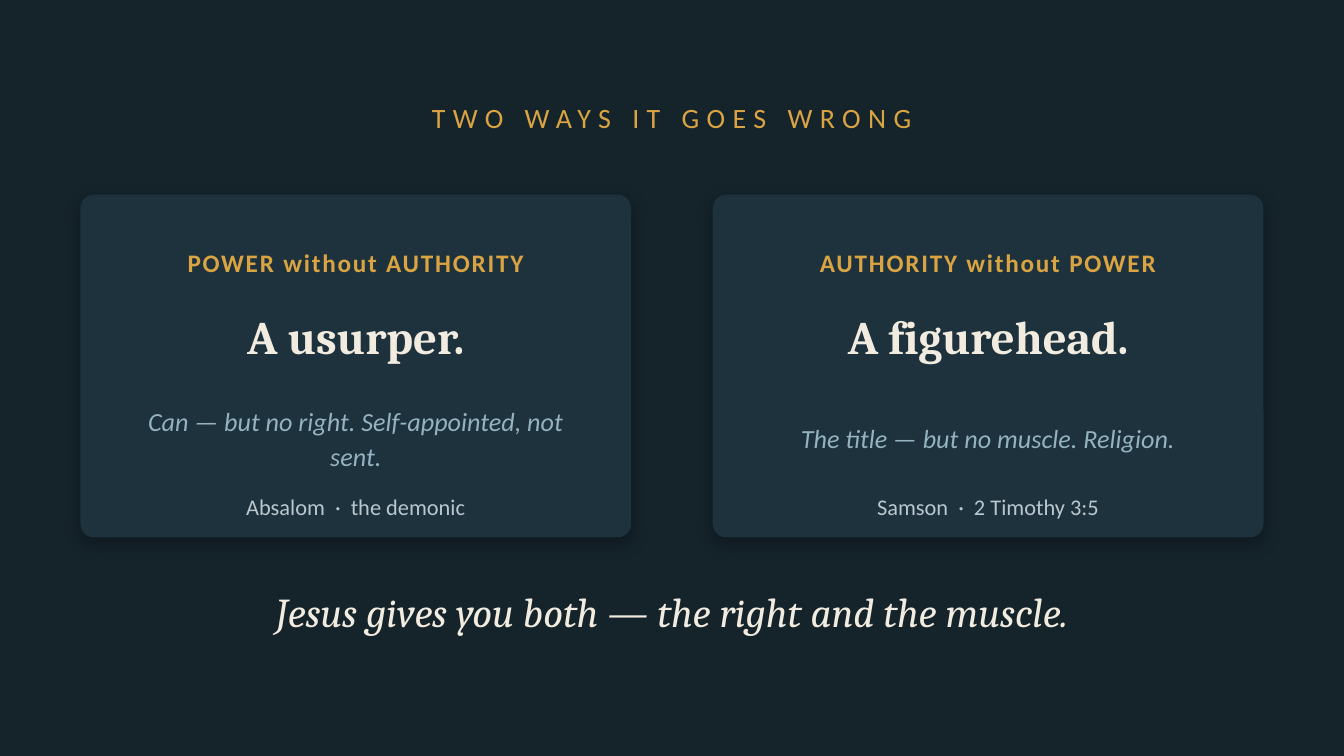
from lxml import etree
from pptx import Presentation
from pptx.dml.color import RGBColor
from pptx.enum import shapes, text
from pptx.oxml import ns
from pptx.util import Cm, Pt

NIGHT = RGBColor(0x15, 0x23, 0x2B)
PANEL = RGBColor(0x1E, 0x32, 0x3D)
GOLD = RGBColor(0xD9, 0xA4, 0x41)
CREAM = RGBColor(0xF2, 0xEC, 0xE0)
MIST = RGBColor(0x94, 0xB2, 0xC0)
SILVER = RGBColor(0xB9, 0xC7, 0xCE)
SANS, SERIF = "Calibri", "Cambria"

# Card rows: offset from card top, width, height (cm), then text style
CARD_ROWS = [
    (0.64, 9.65, 1.27, dict(font=SANS, size=13.5, color=GOLD, bold=True, tracking=1)),
    (1.9, 9.65, 1.52, dict(font=SERIF, size=25, color=CREAM, bold=True)),
    (3.56, 9.14, 2.03, dict(font=SANS, size=14, color=MIST, italic=True, line_spacing=1.12)),
    (5.51, 9.14, 0.76, dict(font=SANS, size=12, color=SILVER)),
]
CARDS = [
    ("POWER without AUTHORITY", "A usurper.",
     "Can — but no right. Self-appointed, not sent.", "Absalom  ·  the demonic"),
    ("AUTHORITY without POWER", "A figurehead.",
     "The title — but no muscle. Religion.", "Samson  ·  2 Timothy 3:5"),
]


def write_line(shape, wording, font, size, color, bold=False, italic=False,
               tracking=0, line_spacing=None):
    """Fill a shape with one centred, styled line of text."""
    frame = shape.text_frame
    frame.word_wrap = True
    frame.auto_size = text.MSO_AUTO_SIZE.NONE
    frame.vertical_anchor = text.MSO_ANCHOR.MIDDLE
    paragraph = frame.paragraphs[0]
    paragraph.alignment = text.PP_ALIGN.CENTER
    if line_spacing:
        paragraph.line_spacing = line_spacing
    run = paragraph.add_run()
    run.text = wording
    run.font.name, run.font.size = font, Pt(size)
    run.font.bold, run.font.italic = bold, italic
    run.font.color.rgb = color
    if tracking:
        run.font._element.set("spc", str(tracking * 100))


def add_soft_shadow(shape):
    """Cast a faint black shadow straight down."""
    shape.shadow.inherit = False
    effects = shape._element.spPr.find(ns.qn("a:effectLst"))
    shadow = etree.SubElement(effects, ns.qn("a:outerShdw"), blurRad=str(Pt(9)),
                              dist=str(Pt(3)), dir=str(90 * 60000),
                              algn="ctr", rotWithShape="0")
    color = etree.SubElement(shadow, ns.qn("a:srgbClr"), val="000000")
    etree.SubElement(color, ns.qn("a:alpha"), val="30000")


def place_title(slide, left, top, width, height):
    title = slide.shapes.title
    title.left, title.top, title.width, title.height = left, top, width, height
    write_line(title, "TWO WAYS IT GOES WRONG", SANS, 15, GOLD, tracking=4)


def add_card(slide, left, top, width, height, lines):
    # Panel
    panel = slide.shapes.add_shape(shapes.MSO_SHAPE.ROUNDED_RECTANGLE,
                                   left, top, width, height)
    panel.adjustments[0] = 0.04
    panel.fill.solid()
    panel.fill.fore_color.rgb = PANEL
    panel.line.fill.background()
    add_soft_shadow(panel)
    # Text rows, centred across the panel
    for wording, (offset, row_width, row_height, style) in zip(lines, CARD_ROWS):
        row_left = left + (width - Cm(row_width)) // 2
        box = slide.shapes.add_textbox(row_left, top + Cm(offset),
                                       Cm(row_width), Cm(row_height))
        write_line(box, wording, **style)


def add_closing_line(slide, left, top, width, height):
    box = slide.shapes.add_textbox(left, top, width, height)
    write_line(box, "Jesus gives you both — the right and the muscle.",
               SERIF, 22, CREAM, italic=True)


def main():
    presentation = Presentation()
    presentation.slide_width, presentation.slide_height = Cm(25.4), Cm(14.29)
    slide = presentation.slides.add_slide(presentation.slide_layouts[5])
    slide.background.fill.solid()
    slide.background.fill.fore_color.rgb = NIGHT

    place_title(slide, Cm(1.27), Cm(1.65), Cm(22.86), Cm(1.14))

    # Two equal cards between the side margins
    margin, card_width = Cm(1.52), Cm(10.41)
    step = presentation.slide_width - 2 * margin - card_width
    for index, lines in enumerate(CARDS):
        add_card(slide, margin + index * step, Cm(3.68), card_width, Cm(6.48), lines)

    add_closing_line(slide, Cm(2.03), Cm(10.8), Cm(21.34), Cm(1.52))
    presentation.save("out.pptx")


if __name__ == "__main__":
    main()
